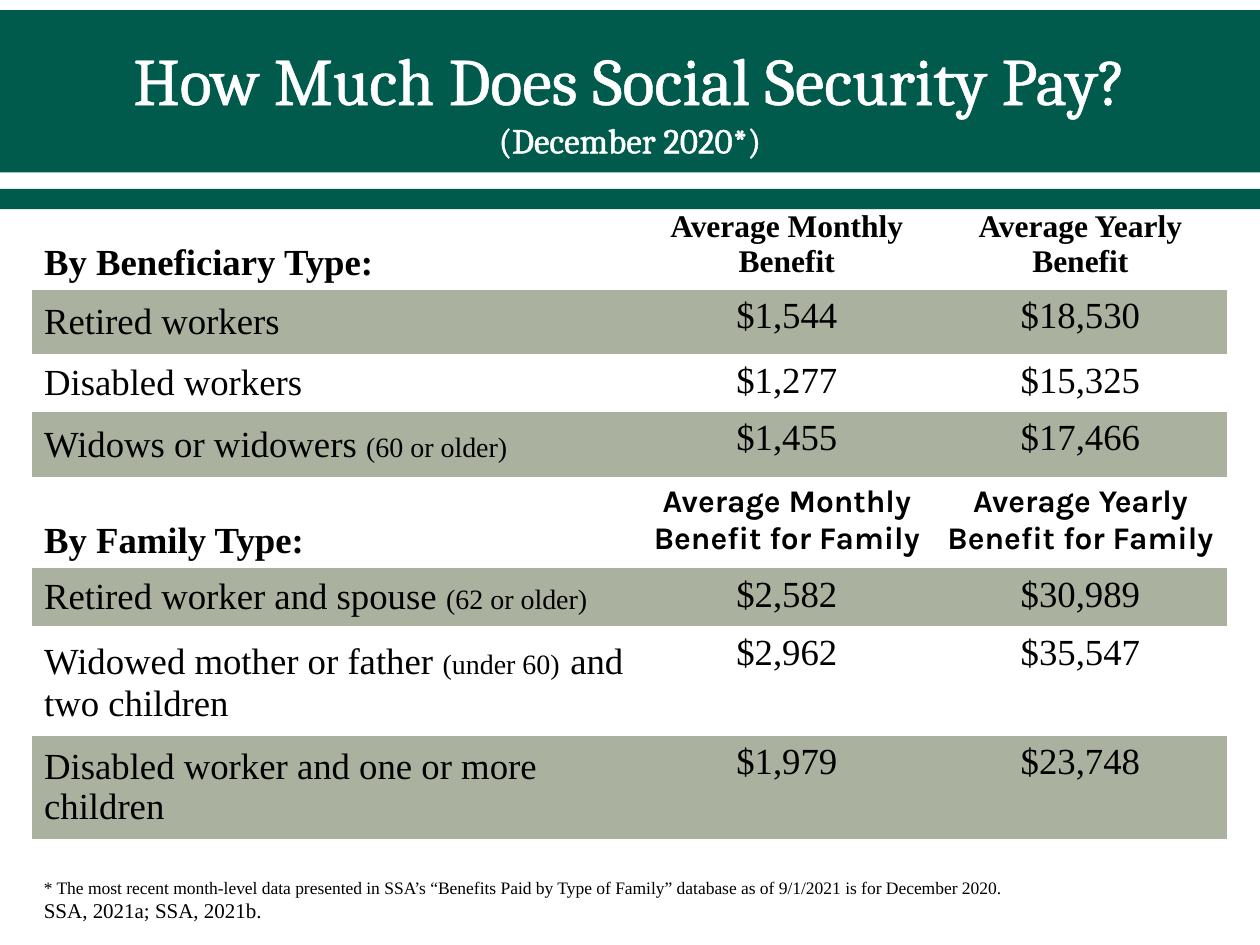
from lxml.etree import SubElement
from pptx import Presentation
from pptx.dml.color import RGBColor
from pptx.enum.shapes import MSO_SHAPE
from pptx.enum.text import MSO_ANCHOR, MSO_AUTO_SIZE, PP_ALIGN
from pptx.oxml.ns import qn
from pptx.util import Inches, Pt

GREEN = "005B4D"
SAGE = "ABB19F"
WHITE = "FFFFFF"
BLACK = "000000"
SERIF = "Times New Roman"
PLAIN_TABLE_STYLE = "{2D5ABB26-0587-4C30-8999-92F81FD0307C}"

COLUMN_WIDTHS = [4.83, 2.33, 2.33]
BENEFICIARY_HEADER = ("By Beneficiary Type:", "Average Monthly Benefit", "Average Yearly Benefit")
FAMILY_HEADER = ("By Family Type:", "Average Monthly Benefit for Family", "Average Yearly Benefit for Family")
BENEFICIARY_ROWS = [
    (0.51, [("Retired workers", 21)], "$1,544", "$18,530"),
    (0.46, [("Disabled workers", 21)], "$1,277", "$15,325"),
    (0.52, [("Widows or widowers ", 21), ("(60 or older)", 16)], "$1,455", "$17,466"),
]
FAMILY_ROWS = [
    (0.46, [("Retired worker and spouse ", 21), ("(62 or older)", 16)], "$2,582", "$30,989"),
    (
        0.87,
        [("Widowed mother or father ", 21), ("(under 60)", 16), (" ", 24), ("and two children", 21)],
        "$2,962",
        "$35,547",
    ),
    (0.82, [("Disabled worker and one or more children", 21)], "$1,979", "$23,748"),
]


def color(value):
    return RGBColor.from_string(value)


def format_font(font, size, name=SERIF, bold=False, fill=BLACK):
    font.size = Pt(size)
    font.name = name
    font.bold = bold
    font.color.rgb = color(fill)


def add_runs(paragraph, runs, name=SERIF, bold=False):
    for text, size in runs:
        run = paragraph.add_run()
        run.text = text
        format_font(run.font, size, name, bold)


def add_bar(slide, top, height):
    shape = slide.shapes.add_shape(MSO_SHAPE.RECTANGLE, 0, Inches(top), Inches(10), Inches(height))
    shape.shadow.inherit = False
    shape.fill.solid()
    shape.fill.fore_color.rgb = color(GREEN)
    shape.line.fill.background()


def outline_text(run, width):
    properties = run.font._element if hasattr(run.font, "_element") else run._r.get_or_add_rPr()
    line = SubElement(properties, qn("a:ln"), w=str(Pt(width)))
    fill = SubElement(line, qn("a:solidFill"))
    SubElement(fill, qn("a:srgbClr"), val=WHITE)
    properties.insert(0, line)


def format_title(slide):
    title = slide.shapes.title
    title.element.getparent().append(title.element)
    title.left, title.top = 0, Inches(0.25)
    title.width, title.height = Inches(10), Inches(1.08)
    frame = title.text_frame
    frame.text = "How Much Does Social Security Pay?\v(December 2020*)"
    frame.auto_size = MSO_AUTO_SIZE.NONE
    frame.vertical_anchor = MSO_ANCHOR.MIDDLE
    paragraph = frame.paragraphs[0]
    paragraph.alignment = PP_ALIGN.CENTER
    for run, size in zip(paragraph.runs, (38, 20)):
        format_font(run.font, size, "Cambria", fill=WHITE)
        outline_text(run, 1.1)


def add_footnote(slide):
    box = slide.shapes.add_textbox(Inches(0.25), Inches(6.91), Inches(8.1), Inches(0.48))
    box.text_frame.word_wrap = True
    note = (
        "* The most recent month-level data presented in SSA’s “Benefits Paid by Type of Family” "
        "database as of 9/1/2021 is for December 2020. "
    )
    add_runs(box.text_frame.paragraphs[0], [(note, 10), ("SSA, 2021a; SSA, 2021b.", 12)])


def fill_cell(cell, runs, anchor, centered=True, name=SERIF, bold=False, shaded=False):
    paragraph = cell.text_frame.paragraphs[0]
    paragraph.alignment = PP_ALIGN.CENTER if centered else PP_ALIGN.LEFT
    add_runs(paragraph, runs, name, bold)
    cell.vertical_anchor = anchor
    if shaded:
        cell.fill.solid()
        cell.fill.fore_color.rgb = color(SAGE)
    else:
        cell.fill.background()


def fill_section(table, first_row, header, header_anchor, header_font, rows):
    table.rows[first_row].height = Inches(0.72)
    fill_cell(table.cell(first_row, 0), [(header[0], 21)], MSO_ANCHOR.BOTTOM, centered=False, bold=True)
    for column in (1, 2):
        fill_cell(table.cell(first_row, column), [(header[column], 18)], header_anchor, name=header_font, bold=True)
    for offset, (height, label, *amounts) in enumerate(rows):
        row = first_row + 1 + offset
        shaded = offset % 2 == 0
        table.rows[row].height = Inches(height)
        fill_cell(table.cell(row, 0), label, MSO_ANCHOR.MIDDLE, centered=False, shaded=shaded)
        for column, amount in enumerate(amounts, 1):
            fill_cell(table.cell(row, column), [(amount, 21)], MSO_ANCHOR.TOP, shaded=shaded)


def add_benefit_table(slide):
    row_count = len(BENEFICIARY_ROWS) + len(FAMILY_ROWS) + 2
    frame = slide.shapes.add_table(row_count, 3, Inches(0.25), Inches(1.58), Inches(9.5), Inches(5.07))
    table = frame.table
    table.first_row = False
    table.horz_banding = False
    for style in frame.element.iter(qn("a:tableStyleId")):
        style.text = PLAIN_TABLE_STYLE
    for column, width in zip(table.columns, COLUMN_WIDTHS):
        column.width = Inches(width)
    fill_section(table, 0, BENEFICIARY_HEADER, MSO_ANCHOR.MIDDLE, SERIF, BENEFICIARY_ROWS)
    fill_section(table, len(BENEFICIARY_ROWS) + 1, FAMILY_HEADER, MSO_ANCHOR.TOP, "Karla", FAMILY_ROWS)


def main():
    presentation = Presentation()
    presentation.slide_width = Inches(10)
    presentation.slide_height = Inches(7.5)
    slide = presentation.slides.add_slide(presentation.slide_layouts[5])
    for top, height in ((0.08, 1.26), (1.5, 0.16), (0.11, 1.26)):
        add_bar(slide, top, height)
    format_title(slide)
    add_footnote(slide)
    add_benefit_table(slide)
    presentation.save("out.pptx")


if __name__ == "__main__":
    main()
